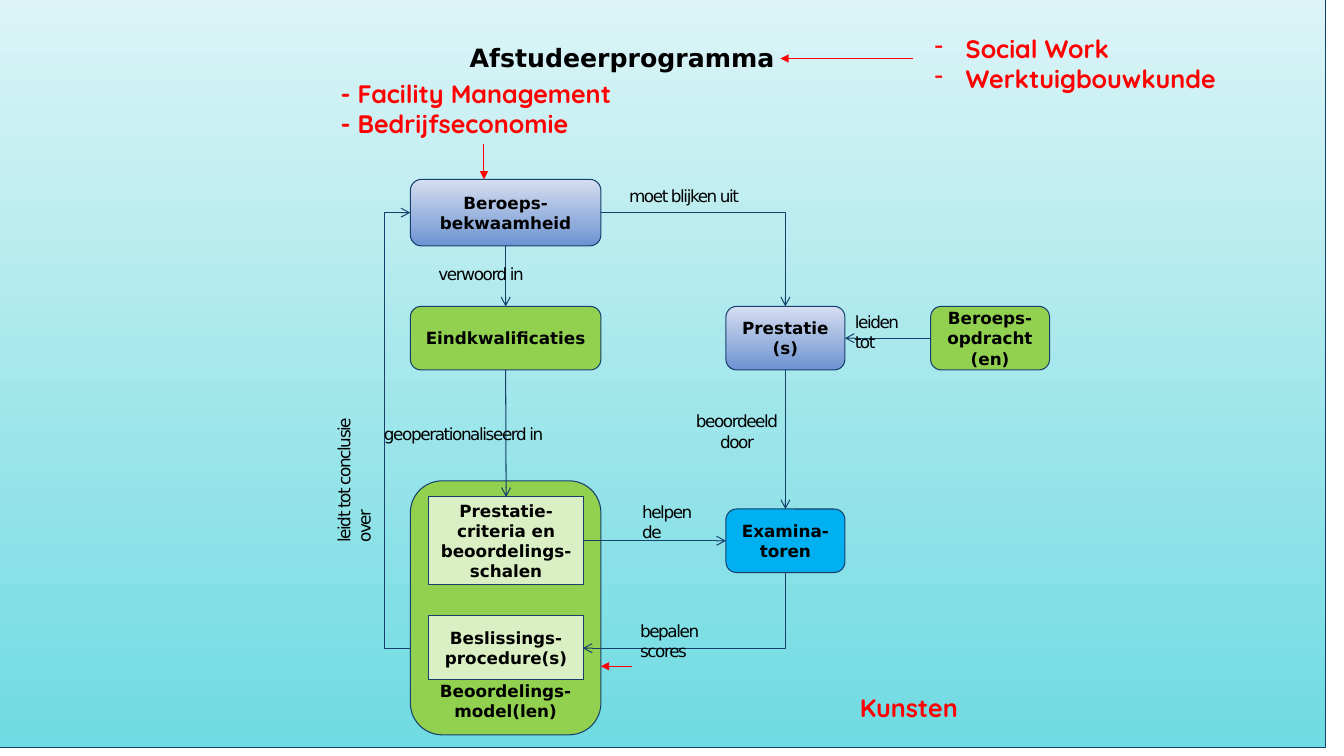
"""Build the flow chart slide of the graduation programme."""
import pptx
import pptx.util
import pptx.dml.color
import pptx.enum.shapes
import pptx.enum.text
import pptx.oxml.ns
import lxml.etree

Inches, Pt = pptx.util.Inches, pptx.util.Pt
RGB = pptx.dml.color.RGBColor
Kind = pptx.enum.shapes.MSO_SHAPE
Link = pptx.enum.shapes.MSO_CONNECTOR
Anchor = pptx.enum.text.MSO_ANCHOR
Align = pptx.enum.text.PP_ALIGN
Auto = pptx.enum.text.MSO_AUTO_SIZE
qn = pptx.oxml.ns.qn

BLACK = RGB(0x00, 0x00, 0x00)
RED = RGB(0xFF, 0x00, 0x00)
NAVY = RGB(0x17, 0x40, 0x6D)
GREEN = RGB(0x92, 0xD0, 0x50)
PALE = RGB(0xDA, 0xEF, 0xC3)
CYAN = RGB(0x00, 0xB0, 0xF0)
BLUE = (RGB(0xD6, 0xDE, 0xF0), RGB(0x6C, 0x93, 0xD2))
AQUA = (RGB(0xDC, 0xF4, 0xF6), RGB(0x6F, 0xDB, 0xE2))

BOLD = {"name": "DejaVu Sans", "size": Pt(12), "bold": True}
PLAIN = {"name": "DejaVu Sans", "size": Pt(12), "bold": False}
TITLE = {"name": "DejaVu Sans", "size": Pt(18), "bold": True}
NOTE = {"name": "Quicksand", "size": Pt(18), "bold": True}

ROUND, RECT = Kind.ROUNDED_RECTANGLE, Kind.RECTANGLE
BACK = (-0.18, -0.04, 13.33, 7.46)
BOXES = {
    "task": ("Beroeps-opdracht (en)", ROUND, (9.23, 3.04, 1.18, 0.63), GREEN),
    "work": ("Prestatie(s)", ROUND, (7.2, 3.04, 1.18, 0.63), BLUE),
    "judge": ("Examina-toren", ROUND, (7.2, 5.05, 1.18, 0.63), CYAN),
    "skill": ("Beroeps-bekwaamheid", ROUND, (4.07, 1.78, 1.89, 0.66), BLUE),
    "goal": ("Eindkwalificaties", ROUND, (4.07, 3.04, 1.89, 0.63), GREEN),
    "model": ("Beoordelings-model(len)", ROUND, (4.07, 4.77, 1.89, 2.52), GREEN),
    "norm": ("Prestatie-criteria en beoordelings-schalen", RECT,
             (4.25, 4.93, 1.54, 0.87), PALE),
    "rule": ("Beslissings-procedure(s)", RECT, (4.25, 6.11, 1.54, 0.63), PALE),
}
JOINS = [("task", 1, "work", 3), ("work", 2, "judge", 0), ("skill", 2, "goal", 0),
         ("goal", 2, "norm", 0), ("norm", 3, "judge", 1)]
LOOP = (4.25, 6.43, 4.07, 2.11)
BENDS = [((5.96, 2.11, 7.79, 3.04), 0), ((6.41, 5.05, 7.16, 7.06), 90)]
CUES = [(4.8, 1.43, 4.8, 1.78), (6.27, 6.61, 5.96, 6.61), (9.06, 0.58, 7.74, 0.58)]
LABELS = [
    (["leiden tot"], (8.38, 3.04, 0.86, 0.3), 0),
    (["moet blijken uit"], (6.14, 1.79, 1.31, 0.3), 0),
    (["leidt tot conclusie over"], (2.52, 4.44, 1.78, 0.3), 270),
    (["beoordeeld", "door"], (6.79, 4.03, 1.04, 0.5), 0),
    (["verwoord in"], (4.25, 2.57, 1.05, 0.3), 0),
    (["geoperationaliseerd in"], (3.71, 4.15, 1.81, 0.3), 0),
    (["helpen de"], (6.27, 4.93, 0.9, 0.3), 0),
    (["bepalen scores"], (6.25, 6.11, 1.27, 0.3), 0),
]
HEAD = (["Afstudeerprogramma"], (4.55, 0.37, 3.24, 0.4))
NOTES = [
    (["- Facility Management", "- Bedrijfseconomie"], (3.28, 0.73, 3.04, 0.71), False),
    (["Kunsten"], (8.43, 6.82, 2.16, 0.4), False),
    (["Social Work", "Werktuigbouwkunde"], (9.17, 0.28, 3.99, 0.71), True),
]


def style(font, form, color):
    for key, value in form.items():
        setattr(font, key, value)
    font.color.rgb = color


def draw(slide, kind, place, paint):
    shape = slide.shapes.add_shape(kind, *map(Inches, place))
    shape.shadow.inherit = False
    if isinstance(paint, tuple) and not isinstance(paint, RGB):
        shape.fill.gradient()
        shape.fill.gradient_angle = 270
        for stop, color in zip(shape.fill.gradient_stops, paint):
            stop.color.rgb = color
    else:
        shape.fill.solid()
        shape.fill.fore_color.rgb = paint
    shape.line.color.rgb = NAVY
    shape.line.width = Pt(0.75)
    return shape


def add_box(slide, text, kind, place, paint):
    shape = draw(slide, kind, place, paint)
    frame = shape.text_frame
    frame.word_wrap = True
    frame.vertical_anchor = Anchor.MIDDLE
    para = frame.paragraphs[0]
    para.alignment = Align.CENTER
    run = para.add_run()
    run.text = text
    style(run.font, BOLD, BLACK)
    return shape


def add_text(slide, lines, place, form, color, align=Align.LEFT, dash=False):
    box = slide.shapes.add_textbox(*map(Inches, place))
    frame = box.text_frame
    frame.word_wrap = True
    frame.auto_size = Auto.SHAPE_TO_FIT_TEXT
    for num, line in enumerate(lines):
        para = frame.add_paragraph() if num else frame.paragraphs[0]
        para.alignment = align
        if dash:
            props = para._p.get_or_add_pPr()
            props.set("marL", str(Inches(0.31)))
            props.set("indent", str(-Inches(0.31)))
            lxml.etree.SubElement(props, qn("a:buChar"), char="-")
        run = para.add_run()
        run.text = line
        style(run.font, form, color)
    return box


def add_line(slide, kind, ends, color=NAVY, tip="arrow"):
    line = slide.shapes.add_connector(kind, *map(Inches, ends))
    line.line.color.rgb = color
    line.line.width = Pt(0.75)
    lxml.etree.SubElement(line.line._get_or_add_ln(), qn("a:tailEnd"), type=tip)
    lxml.etree.SubElement(line._element.spPr, qn("a:effectLst"))
    return line


def add_loop(slide):
    line = add_line(slide, Link.ELBOW, LOOP)
    geom = line._element.spPr.find(qn("a:prstGeom"))
    guides = geom.find(qn("a:avLst"))
    if guides is None:
        guides = lxml.etree.SubElement(geom, qn("a:avLst"))
    lxml.etree.SubElement(guides, qn("a:gd"), name="adj1", fmla="val 240900")


def add_bend(slide, ends, turn):
    props = add_line(slide, Link.ELBOW, ends)._element.spPr
    props.find(qn("a:prstGeom")).set("prst", "bentConnector2")
    if turn:
        props.find(qn("a:xfrm")).set("rot", str(turn * 60000))


def main():
    deck = pptx.Presentation()
    deck.slide_width, deck.slide_height = Inches(13.33), Inches(7.5)
    slide = deck.slides.add_slide(deck.slide_layouts[6])
    draw(slide, RECT, BACK, AQUA)
    add_loop(slide)
    boxes = {key: add_box(slide, *item) for key, item in BOXES.items()}
    frame = boxes["model"].text_frame
    frame.vertical_anchor = Anchor.BOTTOM
    frame.margin_left = frame.margin_right = 0
    for start, out, stop, into in JOINS:
        line = add_line(slide, Link.STRAIGHT, (0, 0, 1, 1))
        line.begin_connect(boxes[start], out)
        line.end_connect(boxes[stop], into)
    for ends, turn in BENDS:
        add_bend(slide, ends, turn)
    for lines, place, turn in LABELS:
        align = Align.CENTER if len(lines) > 1 else Align.LEFT
        box = add_text(slide, lines, place, PLAIN, BLACK, align)
        box.rotation = turn
        for para in box.text_frame.paragraphs:
            para.runs[0].font._element.set("spc", "-100")
    add_text(slide, *HEAD, TITLE, BLACK, Align.CENTER)
    for lines, place, dash in NOTES:
        add_text(slide, lines, place, NOTE, RED, dash=dash)
    for ends in CUES:
        add_line(slide, Link.STRAIGHT, ends, RED, "triangle")
    deck.save("out.pptx")


if __name__ == "__main__":
    main()
